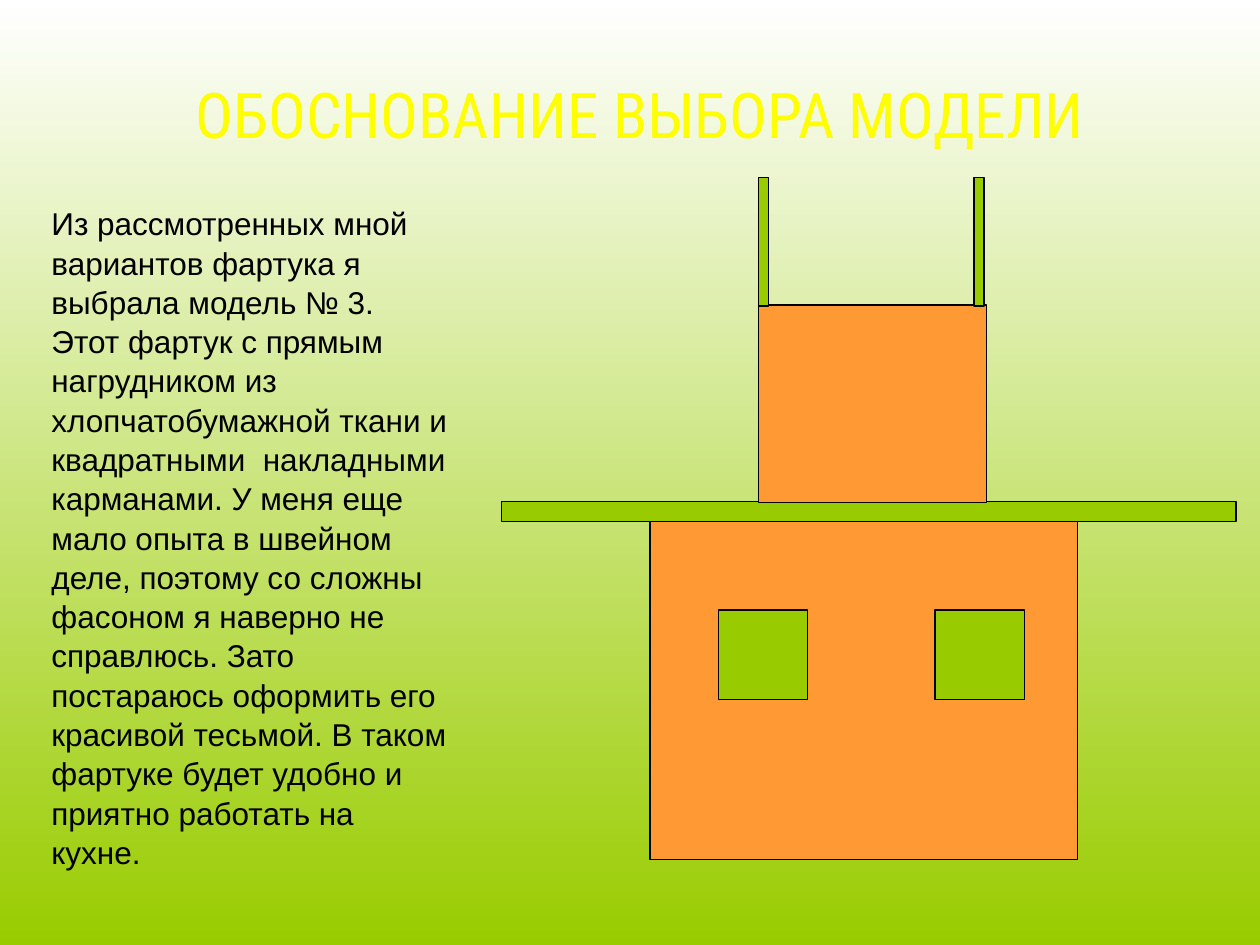
from dataclasses import dataclass

import pptx
import pptx.dml.color
import pptx.enum.shapes
import pptx.enum.text
import pptx.util
from pptx.util import Inches

COLORS = {
    "white": "FFFFFF",
    "green": "99CC00",
    "orange": "FF9933",
    "yellow": "FFFF00",
    "black": "000000",
}
TITLE = "ОБОСНОВАНИЕ ВЫБОРА МОДЕЛИ"
REASONS = (
    "Из рассмотренных мной вариантов фартука я выбрала модель № 3. "
    "Этот фартук с прямым нагрудником из хлопчатобумажной ткани и "
    "квадратными  накладными карманами. У меня еще мало опыта в швейном "
    "деле, поэтому со сложны фасоном я наверно не справлюсь. Зато "
    "постараюсь оформить его красивой тесьмой. В таком фартуке будет "
    "удобно и приятно работать на кухне."
)


@dataclass(frozen=True)
class Piece:
    """A cut piece of the apron, in inches."""
    left: float
    top: float
    width: float
    height: float
    color: str


SKIRT = Piece(5.16, 4.14, 3.39, 2.68, "orange")
POCKETS = [Piece(left, 4.84, 0.71, 0.71, "green") for left in (5.7, 7.42)]
BELT = Piece(3.98, 3.98, 5.83, 0.16, "green")
BIB = Piece(6.02, 2.42, 1.81, 1.57, "orange")
STRAPS = [Piece(left, 1.41, 0.08, 1.02, "green") for left in (7.73, 6.02)]
APRON = [SKIRT, *POCKETS, BELT, BIB, *STRAPS]


def rgb(name: str) -> pptx.dml.color.RGBColor:
    return pptx.dml.color.RGBColor.from_string(COLORS[name])


def paint_background(page: pptx.slide.Slide) -> None:
    fill = page.background.fill
    fill.gradient()
    fill.gradient_angle = 270
    for stop, position, color in zip(fill.gradient_stops, (0, 1), ("white", "green")):
        stop.position = position
        stop.color.rgb = rgb(color)


def write(box: pptx.shapes.base.BaseShape, text: str, size: int, font: str,
          color: str) -> pptx.text.text._Paragraph:
    frame = box.text_frame
    frame.text = text
    frame.vertical_anchor = pptx.enum.text.MSO_ANCHOR.TOP
    para = frame.paragraphs[0]
    para.font.size = pptx.util.Pt(size)
    para.font.name = font
    para.font.color.rgb = rgb(color)
    return para


def add_title(page: pptx.slide.Slide) -> None:
    title = page.shapes.title
    title.left, title.top = Inches(1.02), Inches(0.55)
    title.width, title.height = Inches(8.12), Inches(0.68)
    para = write(title, TITLE, 36, "Roboto Condensed", "yellow")
    para.alignment = pptx.enum.text.PP_ALIGN.CENTER
    title.text_frame.word_wrap = False
    title.text_frame.auto_size = pptx.enum.text.MSO_AUTO_SIZE.NONE


def add_piece(page: pptx.slide.Slide, piece: Piece) -> None:
    shape = page.shapes.add_shape(
        pptx.enum.shapes.MSO_SHAPE.RECTANGLE,
        Inches(piece.left), Inches(piece.top),
        Inches(piece.width), Inches(piece.height))
    shape.shadow.inherit = False
    shape.fill.solid()
    shape.fill.fore_color.rgb = rgb(piece.color)
    shape.line.color.rgb = rgb("black")
    shape.line.width = pptx.util.Pt(0.75)


def add_reasons(page: pptx.slide.Slide) -> None:
    box = page.shapes.add_textbox(
        Inches(0.31), Inches(1.56), Inches(3.36), Inches(5.55))
    box.text_frame.word_wrap = True
    para = write(box, REASONS, 18, "Arial", "black")
    para.line_spacing = 1.04


def main() -> None:
    deck = pptx.Presentation()
    deck.slide_width, deck.slide_height = Inches(10), Inches(7.5)
    page = deck.slides.add_slide(deck.slide_layouts.get_by_name("Title Only"))
    paint_background(page)
    add_title(page)
    for piece in APRON:
        add_piece(page, piece)
    add_reasons(page)
    deck.save("out.pptx")


if __name__ == "__main__":
    main()
